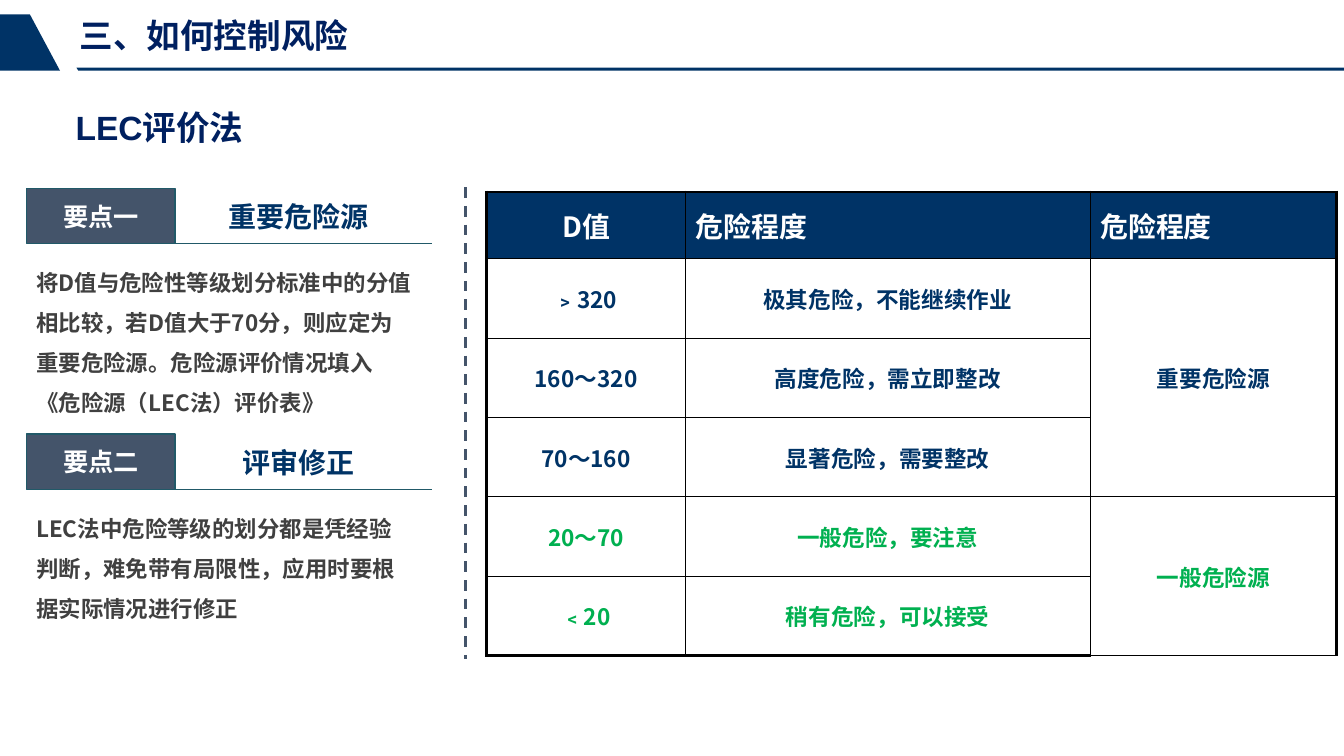
from lxml import etree
from pptx import Presentation
from pptx import util as u
from pptx.dml.color import RGBColor
from pptx.enum import dml, shapes, text
from pptx.oxml import ns

Pt = u.Pt
CJK = "Noto Sans CJK SC"
NAVY, INK, SLATE, TEAL = "003366", "002060", "44546A", "215968"
GREEN, GREY, WHITE, BLACK = "00B050", "404040", "FFFFFF", "000000"
CENTER, LEFT = text.PP_ALIGN.CENTER, text.PP_ALIGN.LEFT

TITLE = "三、如何控制风险"
SUBTITLE = "LEC评价法"
POINTS = [
    ("要点一", "重要危险源",
     "将D值与危险性等级划分标准中的分值相比较，若D值大于70分，则应定为重要危险源。"
     "危险源评价情况填入《危险源（LEC法）评价表》"),
    ("要点二", "评审修正",
     "LEC法中危险等级的划分都是凭经验判断，难免带有局限性，应用时要根据实际情况进行修正"),
]
HEADER = ("D值", "危险程度", "危险程度")
LEVELS = [  # range of D, degree of danger, class (given once per merged block)
    ("﹥320", "极其危险，不能继续作业", "重要危险源"),
    ("160～320", "高度危险，需立即整改", ""),
    ("70～160", "显著危险，需要整改", ""),
    ("20～70", "一般危险，要注意", "一般危险源"),
    ("﹤20", "稍有危险，可以接受", ""),
]
CLASS_BLOCKS = [(1, 3), (4, 5)]
FIRST_GREEN_ROW = 4

BAND_OUTLINES = [
    [(57.6, 51), (1012.5, 51), (1012.5, 53.3), (59, 53.3)],
    [(22.5, 10.8), (45.2, 53.3), (0, 53.3), (0, 10.8)],
]
POINT_TOP, POINT_STEP = 141.8, 185.2
BADGE_LEFT, BADGE_WIDTH, BADGE_HEIGHT = 20.2, 111.6, 41.8
COLUMNS = (149.6, 305, 185.6)
HEADER_HEIGHT, LEVEL_HEIGHT = 50.4, 59.8
TABLE_LEFT, TABLE_TOP = 366.6, 144.6


def rgb(value):
    return RGBColor.from_string(value)


def write(frame, words, size, color, align=LEFT, latin=CJK):
    frame.text = words
    frame.word_wrap = True
    paragraph = frame.paragraphs[0]
    paragraph.alignment = align
    for run in paragraph.runs:
        run.font.size, run.font.bold = Pt(size), True
        run.font.color.rgb = rgb(color)
        run.font.name = latin
        east_asian = etree.SubElement(run.font._element, ns.qn("a:ea"))
        east_asian.set("typeface", CJK)
    return paragraph


def clear_insets(frame):
    frame.margin_left = frame.margin_right = frame.margin_top = frame.margin_bottom = 0


def add_words(box, *args, **kwargs):
    """Add a text box whose text stands in its vertical middle."""
    frame = slide.shapes.add_textbox(*map(Pt, box)).text_frame
    frame.vertical_anchor = text.MSO_ANCHOR.MIDDLE
    write(frame, *args, **kwargs)
    return frame


def add_line(start, end, color, width):
    line = slide.shapes.add_connector(
        shapes.MSO_CONNECTOR.STRAIGHT, *map(Pt, start + end))
    line.line.color.rgb = rgb(color)
    line.line.width = Pt(width)
    etree.SubElement(line._element.spPr, ns.qn("a:effectLst"))
    return line


def add_point(top, badge_words, heading, body):
    badge = slide.shapes.add_shape(
        shapes.MSO_SHAPE.RECTANGLE,
        *map(Pt, (BADGE_LEFT, top, BADGE_WIDTH, BADGE_HEIGHT)))
    badge.shadow.inherit = False
    badge.fill.solid()
    badge.fill.fore_color.rgb = rgb(SLATE)
    badge.line.color.rgb = rgb(TEAL)
    badge.line.width = Pt(1)
    badge.text_frame.vertical_anchor = text.MSO_ANCHOR.MIDDLE
    write(badge.text_frame, badge_words, 19, WHITE, CENTER)

    bottom = top + BADGE_HEIGHT
    rule = add_line((BADGE_LEFT + BADGE_WIDTH / 2, bottom), (325.4, bottom), TEAL, 0.5)
    rule.begin_connect(badge, 2)
    add_words((BADGE_LEFT + BADGE_WIDTH, top + 5, 185.8, 33), heading, 21.1, NAVY, CENTER)
    explanation = add_words((BADGE_LEFT, top + 47.4, 297.4, 126), body, 16.9, GREY)
    explanation.vertical_anchor = text.MSO_ANCHOR.TOP
    explanation.paragraphs[0].line_spacing = Pt(30.2)


def set_borders(cell, row, column):
    """Thick line on the outside of the table, thin line between cells."""
    outer = {"L": column == 0, "R": column == len(COLUMNS) - 1,
             "T": row == 0, "B": row == len(LEVELS)}
    properties = cell._tc.get_or_add_tcPr()
    for side, is_outer in outer.items():
        edge = etree.SubElement(properties, ns.qn("a:ln" + side))
        edge.set("w", str(Pt(2.25 if is_outer else 1)))
        fill = etree.SubElement(edge, ns.qn("a:solidFill"))
        etree.SubElement(fill, ns.qn("a:srgbClr")).set("val", BLACK)


def add_levels_table():
    heights = [HEADER_HEIGHT] + [LEVEL_HEIGHT] * len(LEVELS)
    table = slide.shapes.add_table(
        len(heights), len(COLUMNS),
        *map(Pt, (TABLE_LEFT, TABLE_TOP, sum(COLUMNS), sum(heights)))).table
    table.first_row = table.horz_banding = False
    for column, width in zip(table.columns, COLUMNS):
        column.width = Pt(width)
    for row, height in zip(table.rows, heights):
        row.height = Pt(height)
    for r, entries in enumerate([HEADER] + LEVELS):
        color = WHITE if r == 0 else GREEN if r >= FIRST_GREEN_ROW else NAVY
        for c, words in enumerate(entries):
            cell = table.cell(r, c)
            set_borders(cell, r, c)
            cell.fill.solid()
            cell.fill.fore_color.rgb = rgb(NAVY if r == 0 else WHITE)
            cell.vertical_anchor = text.MSO_ANCHOR.MIDDLE
            cell.margin_left = cell.margin_right = Pt(7.6)
            align = LEFT if r == 0 and c > 0 else CENTER
            if words:
                write(cell.text_frame, words, 21 if r == 0 else 17, color, align)
    for first, last in CLASS_BLOCKS:
        table.cell(first, 2).merge(table.cell(last, 2))


deck = Presentation()
deck.slide_width, deck.slide_height = Pt(1012.3), Pt(569.5)
slide = deck.slides.add_slide(deck.slide_layouts[5])

for first, *others in BAND_OUTLINES:
    outline = slide.shapes.build_freeform(*map(Pt, first))
    outline.add_line_segments([(Pt(x), Pt(y)) for x, y in others])
    band = outline.convert_to_shape()
    band.shadow.inherit = False
    band.fill.solid()
    band.fill.fore_color.rgb = rgb(NAVY)
    band.line.fill.background()

title = slide.shapes.title
title.left, title.top, title.width, title.height = map(Pt, (59.8, 10.8, 326.8, 31))
title.text_frame.auto_size = text.MSO_AUTO_SIZE.NONE
title.text_frame.vertical_anchor = text.MSO_ANCHOR.MIDDLE
clear_insets(title.text_frame)
write(title.text_frame, TITLE, 25.3, INK, latin="Arial")
clear_insets(add_words((56.9, 80.6, 326.8, 31), SUBTITLE, 25.3, INK, latin="Arial"))

divider = add_line((350.6, 141.1), (350.6, 496.8), SLATE, 2)
divider.line.dash_style = dml.MSO_LINE.DASH
for index, point in enumerate(POINTS):
    add_point(POINT_TOP + index * POINT_STEP, *point)
add_levels_table()

deck.save("out.pptx")
